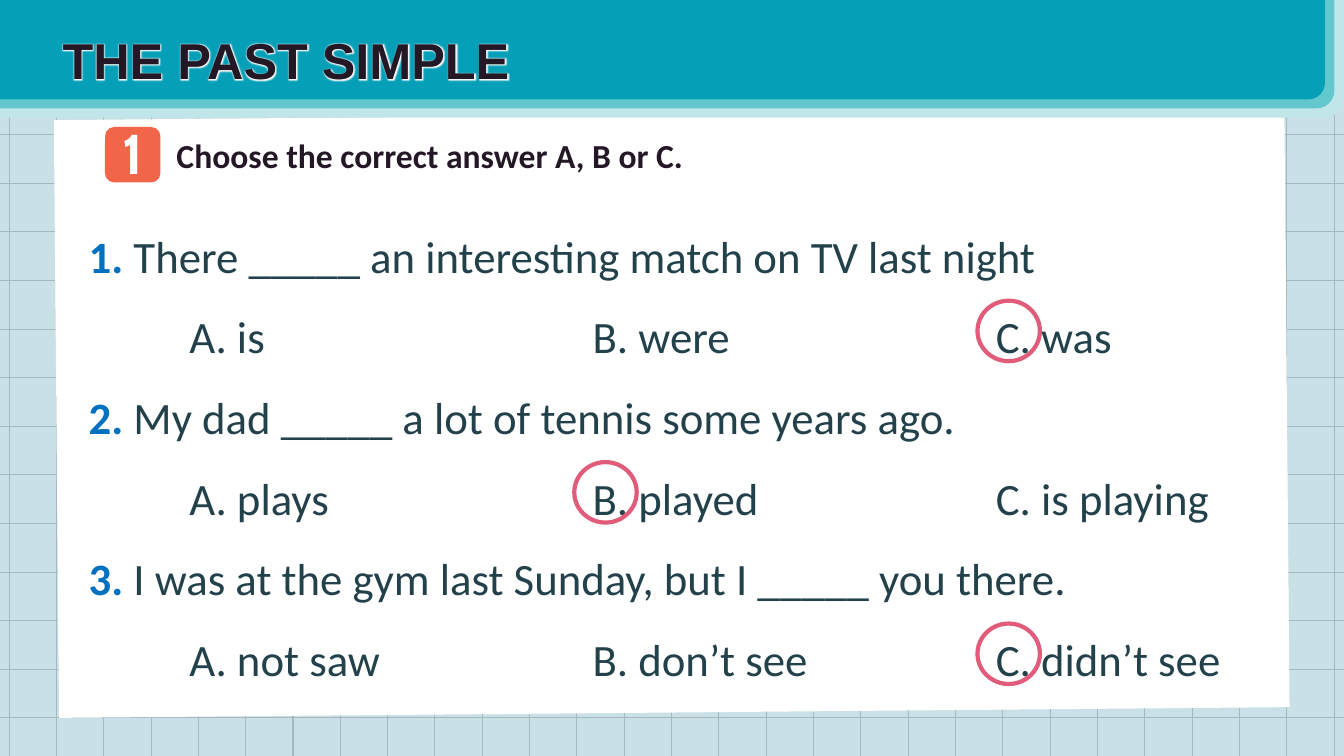
from lxml.etree import SubElement
from pptx import Presentation
from pptx.dml.color import RGBColor
from pptx.enum.shapes import MSO_CONNECTOR, MSO_SHAPE
from pptx.enum.text import MSO_ANCHOR, PP_ALIGN
from pptx.oxml import parse_xml
from pptx.oxml.ns import nsdecls, qn
from pptx.util import Pt

W, H = 960, 540
COLORS = {
    "background": "C9E0E6", "grid": "A4B8BD", "paper": "FFFFFF",
    "band_light": "C0E6EA", "band_mid": "62C8CE", "band_dark": "05A0B8",
    "badge": "F16649", "white": "FFFFFF", "dark": "241826",
    "number": "0070C0", "text": "22414A", "circle": "E15C7A",
}
QUESTIONS = [
    ("There _____ an interesting match on TV last night", ["is", "were", "was"], "C"),
    ("My dad _____ a lot of tennis some years ago.", ["plays", "played", "is playing"], "B"),
    ("I was at the gym last Sunday, but I _____ you there.",
     ["not saw", "don’t see", "didn’t see"], "C"),
]
TABS = {"A": 72, "B": 360, "C": 648}
INSET = 7.2


def rgb(name):
    return RGBColor.from_string(COLORS[name])


def add_filled(slide, kind, box, color=None):
    s = slide.shapes.add_shape(kind, *map(Pt, box))
    s.shadow.inherit = False
    s.line.fill.background()
    if color:
        s.fill.solid()
        s.fill.fore_color.rgb = rgb(color)
    else:
        s.fill.background()
    return s


def format_run(r, size, font, color, bold=False):
    r.font.size, r.font.name, r.font.bold = Pt(size), font, bold
    r.font.color.rgb = rgb(color)


def add_text(slide, box, text, size, font, color, align=PP_ALIGN.LEFT):
    tf = slide.shapes.add_textbox(*map(Pt, box)).text_frame
    tf.word_wrap = True
    tf.text = text
    p = tf.paragraphs[0]
    p.alignment = align
    format_run(p.runs[0], size, font, color, bold=True)


def add_grid(slide, x, y, w, h):
    def add_line(*ends):
        line = slide.shapes.add_connector(MSO_CONNECTOR.STRAIGHT, *map(Pt, ends))
        line.line.color.rgb = rgb("grid")
        line.line.width = Pt(0.75)
        SubElement(line.element.spPr, qn("a:effectLst"))

    for i in range(29):
        col = x + 6.5 + i * 33.8
        add_line(col, y, col, y + h)
    for i in range(15):
        row = y + 26.9 + i * 34.7
        add_line(x, row, x + w, row)


def add_header(slide, x, y, w, h):
    for i, color in enumerate(["band_light", "band_mid", "band_dark"]):
        box = (x, y, w - i * 6.8, h - i * 6.5)
        s = add_filled(slide, MSO_SHAPE.ROUND_1_RECTANGLE, box, color)
        s.element.spPr.find(qn("a:xfrm")).set("flipV", "1")

    title = slide.shapes.title
    slide.shapes.element.append(title.element)  # bring the title in front of the bands
    title.left, title.top = Pt(x + 37.5), Pt(y + 17.3)
    title.width, title.height = Pt(346), Pt(51)
    tf = title.text_frame
    tf.text = "THE PAST SIMPLE"
    tf.vertical_anchor = MSO_ANCHOR.TOP
    tf.word_wrap = True
    p = tf.paragraphs[0]
    p.alignment = PP_ALIGN.LEFT
    r = p.runs[0]
    format_run(r, 36, "Arial", "dark", bold=True)
    glow = parse_xml(
        f'<a:effectLst {nsdecls("a")}><a:glow rad="{Pt(3)}">'
        f'<a:srgbClr val="{COLORS["white"]}"/></a:glow></a:effectLst>')
    r.font.fill  # the glow follows the fill in the run properties
    p.runs[0].font._element.find(qn("a:solidFill")).addnext(glow)


def add_instruction(slide, x, y, w, h):
    add_filled(slide, MSO_SHAPE.ROUNDED_RECTANGLE, (x, y, h, h), "badge")
    add_text(slide, (x + 44, y + 2, w - 44, 36), "Choose the correct answer A, B or C.",
             24, "Calibri", "dark")
    add_text(slide, (x + 4.3, y - 9.4, 31, 55.4), "1", 40, "Cabin", "white", PP_ALIGN.CENTER)


def add_questions(slide, x, y, w, h):
    tf = slide.shapes.add_textbox(*map(Pt, (x, y, w, h))).text_frame
    tf.word_wrap = True

    def add_line(first, *parts):
        p = tf.paragraphs[0] if first else tf.add_paragraph()
        p.line_spacing = 1.5
        for text, color, bold in parts:
            r = p.add_run()
            r.text = text
            format_run(r, 32, "Calibri", color, bold)
        return p

    for i, (question, options, answer) in enumerate(QUESTIONS):
        add_line(i == 0, (f"{i + 1}. ", "number", True), (question, "text", False))
        text = "".join(f"\t{letter}. {option}" for letter, option in zip(TABS, options))
        p = add_line(False, (text, "text", False))
        stops = SubElement(p._p.get_or_add_pPr(), qn("a:tabLst"))
        for pos in TABS.values():
            SubElement(stops, qn("a:tab"), pos=str(Pt(pos)), algn="l")

        box = (x + INSET + TABS[answer] - 13.2, y + 74.4 + i * 115.3, 44.6, 43.2)
        s = add_filled(slide, MSO_SHAPE.OVAL, box)
        s.line.color.rgb = rgb("circle")
        s.line.width = Pt(3)


def main():
    prs = Presentation()
    prs.slide_width, prs.slide_height = Pt(W), Pt(H)
    slide = prs.slides.add_slide(prs.slide_layouts[5])
    slide.background.fill.solid()
    slide.background.fill.fore_color.rgb = rgb("background")

    add_grid(slide, 0, 0, W, H)
    paper = add_filled(slide, MSO_SHAPE.RECTANGLE, (40.3, 82, 879, 427), "paper")
    paper.rotation = -0.5
    add_questions(slide, 56.2, 140.4, 898, 350)
    add_header(slide, 0, 0, W, 84)
    add_instruction(slide, 75, 90.7, 814, 39.6)
    prs.save("out.pptx")


if __name__ == "__main__":
    main()
